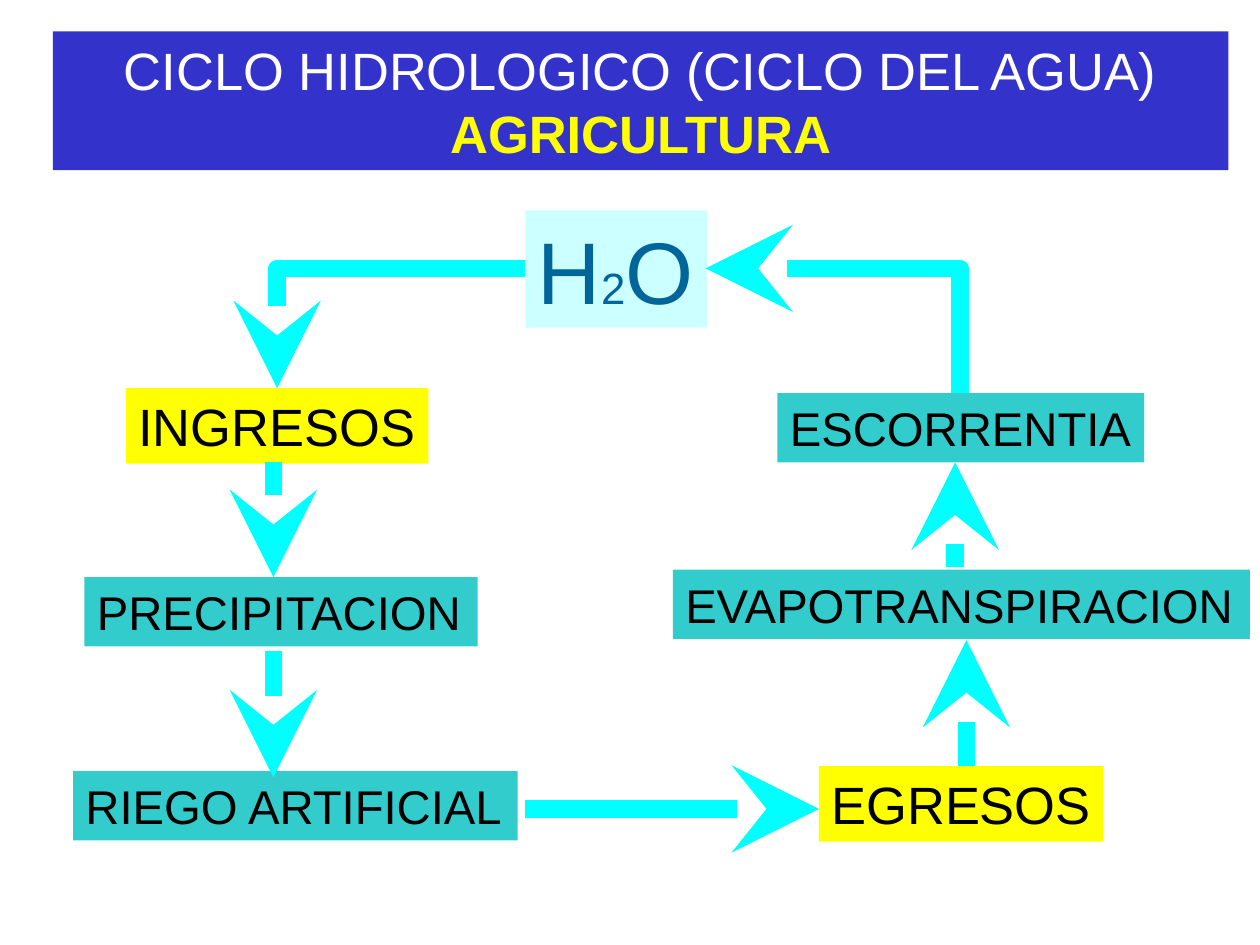
from lxml import etree
from pptx import Presentation
from pptx.dml.color import RGBColor
from pptx.enum.shapes import MSO_CONNECTOR as Link, MSO_SHAPE as Shape
from pptx.enum.text import MSO_ANCHOR as Anchor, MSO_AUTO_SIZE as AutoSize, PP_ALIGN as Align
from pptx.oxml.ns import qn
from pptx.util import Inches, Pt

COLORS = {
    "banner": "3333CC", "water": "CCFFFF", "flow": "FFFF00", "process": "33CCCC",
    "arrow": "00FFFF", "white": "FFFFFF", "yellow": "FFFF00", "blue": "006699",
    "black": "000000",
}

# text, left, top, width, height, fill, size
STAGES = [
    ("INGRESOS", 1, 3.08, 2.4, 0.6, "flow", 30),
    ("PRECIPITACION", 0.67, 4.58, 3.12, 0.55, "process", 27),
    ("RIEGO ARTIFICIAL", 0.58, 6.12, 3.53, 0.55, "process", 27),
    ("EGRESOS", 6.5, 6.08, 2.26, 0.6, "flow", 30),
    ("EVAPOTRANSPIRACION", 5.34, 4.52, 4.58, 0.55, "process", 27),
    ("ESCORRENTIA", 6.17, 3.12, 2.91, 0.55, "process", 27),
]

# start x, start y, end x, end y
STRAIGHT_ARROWS = [
    (2.17, 3.67, 2.17, 4.58),
    (2.17, 5.17, 2.17, 6.17),
    (4.17, 6.42, 6.5, 6.42),
    (7.67, 6.08, 7.67, 5.08),
    (7.58, 4.5, 7.58, 3.67),
]


def color(name):
    return RGBColor.from_string(COLORS[name])


def add_box(slide, left, top, width, height, fill, wrap=False):
    """Add a filled box and return its first paragraph."""
    box = slide.shapes.add_shape(
        Shape.RECTANGLE, Inches(left), Inches(top), Inches(width), Inches(height))
    box.shadow.inherit = False
    box.fill.solid()
    box.fill.fore_color.rgb = color(fill)
    box.line.fill.background()
    frame = box.text_frame
    frame.word_wrap = wrap
    frame.auto_size = AutoSize.SHAPE_TO_FIT_TEXT
    frame.vertical_anchor = Anchor.TOP
    para = frame.paragraphs[0]
    para.alignment = Align.LEFT
    return para


def add_span(para, text, size, ink, bold=False):
    span = para.add_run()
    span.text = text
    span.font.name = "Arial"
    span.font.size = Pt(size)
    span.font.bold = bold
    span.font.color.rgb = color(ink)


def add_arrow(slide, x1, y1, x2, y2, kind=Link.STRAIGHT):
    arrow = slide.shapes.add_connector(
        kind, Inches(x1), Inches(y1), Inches(x2), Inches(y2))
    arrow.line.color.rgb = color("arrow")
    arrow.line.width = Pt(10)
    props = arrow.line._get_or_add_ln()
    etree.SubElement(props, qn("a:tailEnd"), type="stealth", w="lg", len="lg")
    etree.SubElement(arrow._element.spPr, qn("a:effectLst"))
    return arrow


def add_corner_arrow(slide, x1, y1, x2, y2, upright=False):
    """Add an arrow with one right angle; an upright one leaves vertically, up and left."""
    if upright:
        mid_x, mid_y = (x1 + x2) / 2, (y1 + y2) / 2
        half_w, half_h = abs(y2 - y1) / 2, abs(x2 - x1) / 2
        x1, y1 = mid_x + half_w, mid_y - half_h
        x2, y2 = mid_x - half_w, mid_y + half_h
    arrow = add_arrow(slide, x1, y1, x2, y2, Link.ELBOW)
    props = arrow._element.spPr
    props.find(qn("a:prstGeom")).set("prst", "bentConnector2")
    if upright:
        props.find(qn("a:xfrm")).set("rot", str(90 * 60000))


def add_title(slide):
    para = add_box(slide, 0.42, 0.25, 9.33, 1.1, "banner", wrap=True)
    para.alignment = Align.CENTER
    add_span(para, "CICLO HIDROLOGICO (CICLO DEL AGUA)", 30, "white")
    para.add_line_break()
    add_span(para, "AGRICULTURA", 30, "yellow", bold=True)


def add_water(slide):
    para = add_box(slide, 4.17, 1.67, 1.44, 0.93, "water")
    for text, size in (("H", 50), ("2", 25), ("O", 50)):
        add_span(para, text, size, "blue")


def main():
    deck = Presentation()
    deck.slide_width, deck.slide_height = Inches(10), Inches(7.5)
    slide = deck.slides.add_slide(deck.slide_layouts[6])
    add_title(slide)
    add_water(slide)
    for text, left, top, width, height, fill, size in STAGES:
        para = add_box(slide, left, top, width, height, fill)
        add_span(para, text, size, "black")
    add_corner_arrow(slide, 4.17, 2.13, 2.2, 3.08)
    for ends in STRAIGHT_ARROWS:
        add_arrow(slide, *ends)
    add_corner_arrow(slide, 7.62, 3.12, 5.6, 2.13, upright=True)
    deck.save("out.pptx")


if __name__ == "__main__":
    main()
